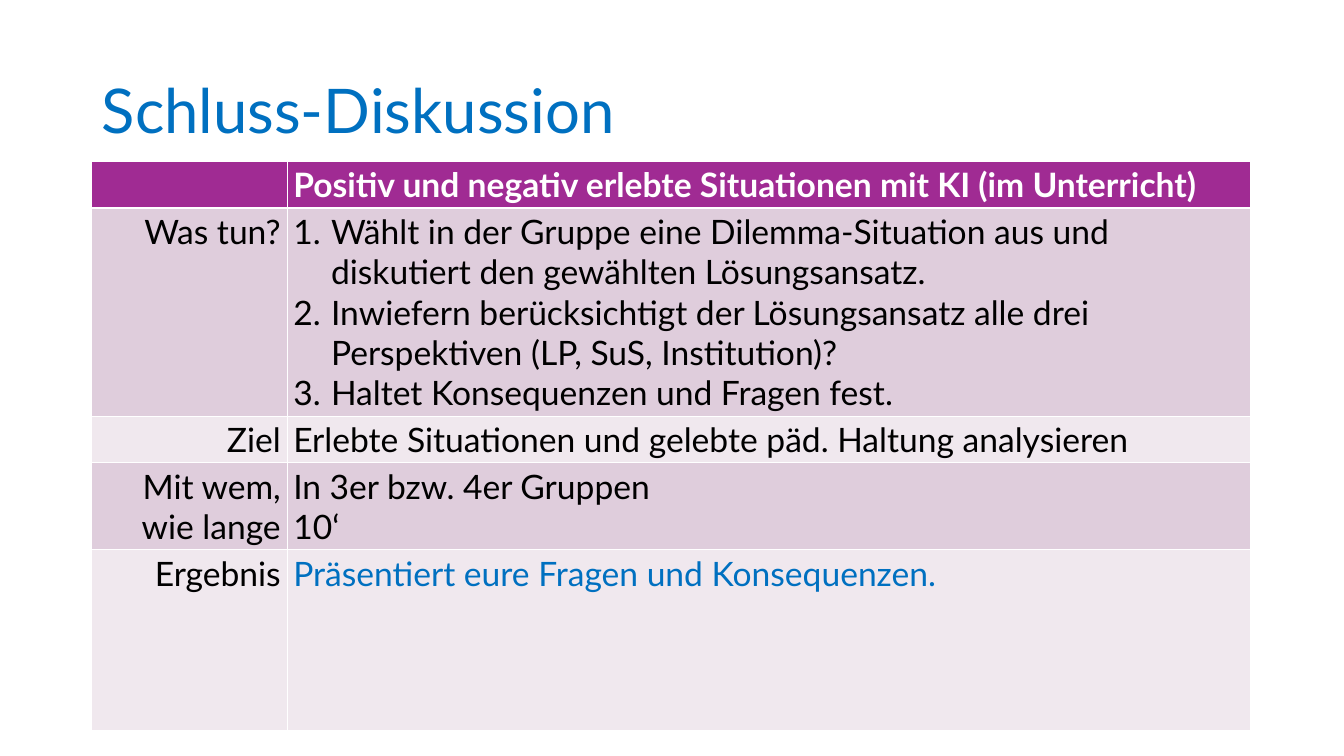
import pptx
import pptx.util
import pptx.dml.color
import pptx.enum.text
import pptx.oxml
import pptx.oxml.ns
from lxml import etree

Pt = pptx.util.Pt
ALIGN = pptx.enum.text.PP_ALIGN
ANCHOR = pptx.enum.text.MSO_ANCHOR
COLORS = {
    "blue": "0070C0",
    "purple": "A02B93",
    "dark": "DFCDDC",
    "light": "F0E8EE",
    "black": "000000",
    "white": "FFFFFF",
}
LEFT, WIDTH = 65.5, 828
COLS = [139.5, 688.5]
ROWS = [
    (31, "", ["Positiv und negativ erlebte Situationen mit KI (im Unterricht)"]),
    (128, "Was tun?", [
        "Wählt in der Gruppe eine Dilemma-Situation aus und diskutiert den gewählten Lösungsansatz.",
        "Inwiefern berücksichtigt der Lösungsansatz alle drei Perspektiven (LP, SuS, Institution)?",
        "Haltet Konsequenzen und Fragen fest.",
    ]),
    (31, "Ziel", ["Erlebte Situationen und gelebte päd. Haltung analysieren"]),
    (55.5, "Mit wem, wie lange", ["In 3er bzw. 4er Gruppen", "10‘"]),
    (129, "Ergebnis", ["Präsentiert eure Fragen und Konsequenzen."]),
]


def rgb(name):
    return pptx.dml.color.RGBColor.from_string(COLORS[name])


def number(para, indent=27):
    props = para._p.get_or_add_pPr()
    props.set("marL", str(Pt(indent)))
    props.set("indent", str(-Pt(indent)))
    for tag, attrs in (("a:buFont", {"typeface": "+mj-lt"}),
                       ("a:buAutoNum", {"type": "arabicPeriod"})):
        etree.SubElement(props, pptx.oxml.ns.qn(tag), attrs)


def write(frame, lines, size=24, color="black", bold=False,
          align=ALIGN.LEFT, listed=False, spacing=None):
    for index, line in enumerate(lines):
        para = frame.add_paragraph() if index else frame.paragraphs[0]
        if listed:
            number(para)
        para.alignment = align
        if spacing:
            para.line_spacing = spacing
        run = para.add_run()
        run.text = line
        font = run.font
        font.name, font.size, font.bold = "Lato", Pt(size), bold
        font.color.rgb = rgb(color)


def border(cell, side, width):
    props = cell._tc.get_or_add_tcPr()
    line = etree.SubElement(props, pptx.oxml.ns.qn("a:ln" + side), w=str(Pt(width)))
    fill = etree.SubElement(line, pptx.oxml.ns.qn("a:solidFill"))
    etree.SubElement(fill, pptx.oxml.ns.qn("a:srgbClr"), val=COLORS["white"])


def style(cell, row):
    cell.margin_left = cell.margin_right = Pt(4.5)
    cell.margin_top = cell.margin_bottom = Pt(2.25)
    for side in "LRTB":
        thick = (row, side) in ((0, "B"), (1, "T"))
        border(cell, side, 1.8 if thick else 0.75)
    cell.fill.solid()
    cell.fill.fore_color.rgb = rgb("purple" if row == 0 else "dark" if row % 2 else "light")


def add_title(slide, text):
    title = slide.shapes.title
    title.left, title.top = Pt(LEFT), Pt(29)
    title.width, title.height = Pt(WIDTH), Pt(104.5)
    title.text_frame.vertical_anchor = ANCHOR.MIDDLE
    write(title.text_frame, [text], size=44, color="blue", spacing=0.9)


def add_grid(slide):
    height = sum(row[0] for row in ROWS)
    table = slide.shapes.add_table(
        len(ROWS), len(COLS), Pt(LEFT), Pt(115.5), Pt(WIDTH), Pt(height)).table
    table.horz_banding = False
    for column, width in zip(table.columns, COLS):
        column.width = Pt(width)
    for row, (height, label, lines) in enumerate(ROWS):
        table.rows[row].height = Pt(height)
        head, body = table.cell(row, 0), table.cell(row, 1)
        style(head, row)
        style(body, row)
        if label:
            write(head.text_frame, [label], align=ALIGN.RIGHT)
        color = {0: "white", len(ROWS) - 1: "blue"}.get(row, "black")
        write(body.text_frame, lines, color=color, bold=row == 0, listed=row == 1)


def main():
    deck = pptx.Presentation()
    deck.slide_width, deck.slide_height = Pt(960), Pt(540)
    slide = deck.slides.add_slide(deck.slide_layouts[5])
    add_title(slide, "Schluss-Diskussion")
    add_grid(slide)
    deck.save("out.pptx")


if __name__ == "__main__":
    main()
